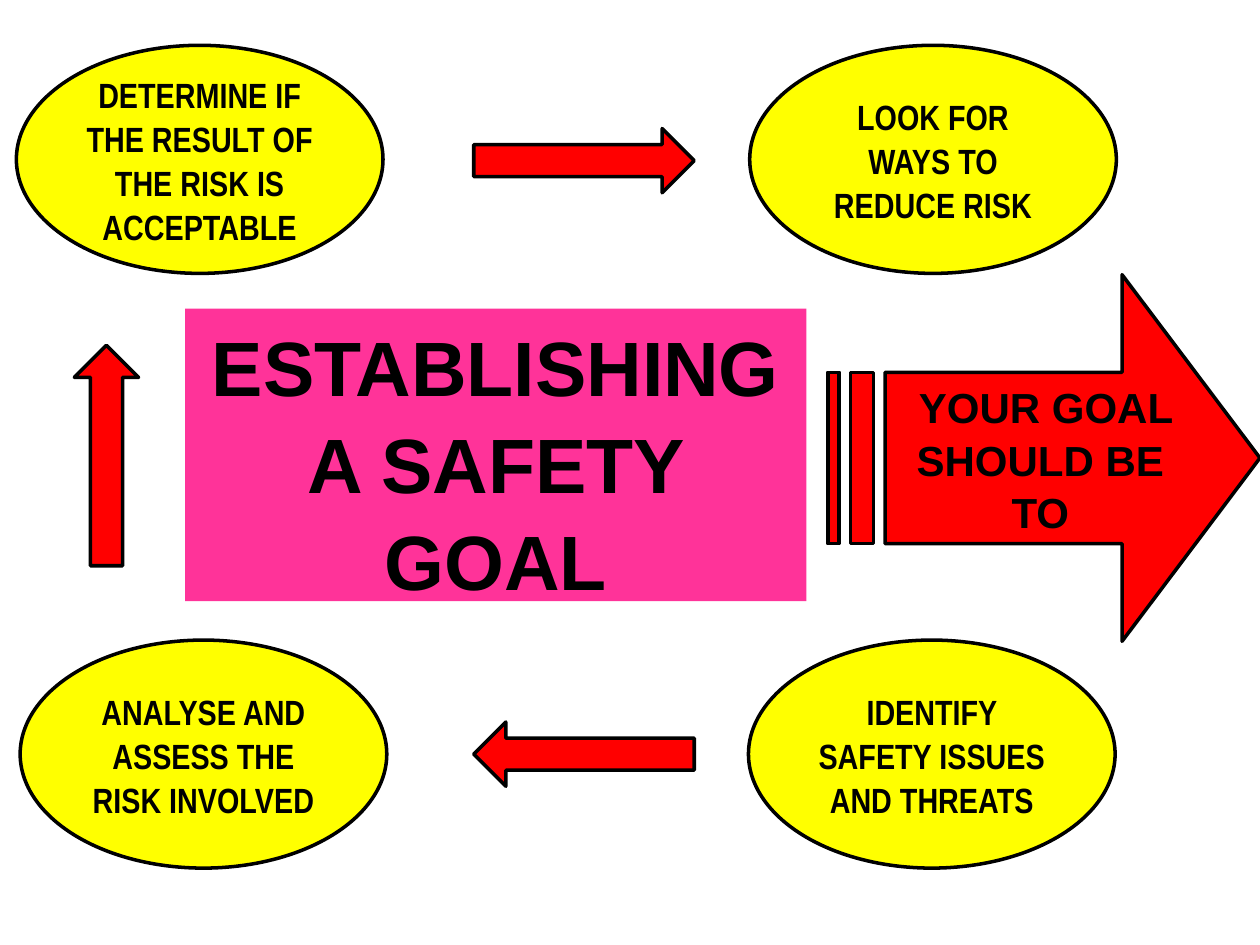
from pptx import Presentation
from pptx.dml.color import RGBColor
from pptx.enum import shapes, text
from pptx.util import Inches, Pt

PINK = RGBColor(0xFF, 0x33, 0x99)
YELLOW = RGBColor(0xFF, 0xFF, 0x00)
RED = RGBColor(0xFF, 0x00, 0x00)
BLACK = RGBColor(0x00, 0x00, 0x00)

OVAL_SIZE = (2.91, 1.81)
ARROW_SIZE = (0.51, 1.75)


def write(sp, words, size, font="Arial", anchor=text.MSO_ANCHOR.MIDDLE):
    tf = sp.text_frame
    tf.word_wrap = True
    tf.vertical_anchor = anchor
    tf.text = words
    p = tf.paragraphs[0]
    p.alignment = text.PP_ALIGN.CENTER
    p.line_spacing = 1.05
    r = p.runs[0]
    r.font.name = font
    r.font.size = Pt(size)
    r.font.bold = True
    r.font.color.rgb = BLACK


def add_outlined(s, kind, left, top, size, fill):
    sp = s.shapes.add_shape(kind, Inches(left), Inches(top), *map(Inches, size))
    sp.shadow.inherit = False
    sp.fill.solid()
    sp.fill.fore_color.rgb = fill
    sp.line.color.rgb = BLACK
    sp.line.width = Pt(2)
    return sp


def add_step(s, left, top, words):
    sp = add_outlined(s, shapes.MSO_SHAPE.OVAL, left, top, OVAL_SIZE, YELLOW)
    write(sp, words, 20, "Arial Narrow")


def add_arrow(s, left, top, rotation):
    sp = add_outlined(s, shapes.MSO_SHAPE.UP_ARROW, left, top, ARROW_SIZE, RED)
    sp.rotation = rotation


def add_title(s, words):
    sp = s.shapes.title
    sp.left, sp.top = Inches(1.47), Inches(2.45)
    sp.width, sp.height = Inches(4.93), Inches(2.32)
    sp.fill.solid()
    sp.fill.fore_color.rgb = PINK
    write(sp, words, 44, anchor=text.MSO_ANCHOR.TOP)
    sp.text_frame.auto_size = text.MSO_AUTO_SIZE.SHAPE_TO_FIT_TEXT


def add_goal_arrow(s, words):
    sp = add_outlined(s, shapes.MSO_SHAPE.STRIPED_RIGHT_ARROW,
                      6.57, 2.18, (3.43, 2.91), RED)
    sp.adjustments[0] = 0.467
    sp.adjustments[1] = 0.376
    write(sp, words, 24)


def main():
    prs = Presentation()
    prs.slide_width, prs.slide_height = Inches(10), Inches(7.5)
    s = prs.slides.add_slide(prs.slide_layouts[5])

    add_title(s, "ESTABLISHING A SAFETY GOAL")

    # Cycle of steps, clockwise from the lower right
    add_step(s, 5.94, 5.08, "IDENTIFY SAFETY ISSUES AND THREATS")
    add_step(s, 0.16, 5.08, "ANALYSE AND ASSESS THE RISK INVOLVED")
    add_step(s, 0.13, 0.36, "DETERMINE IF THE RESULT OF THE RISK IS ACCEPTABLE")
    add_step(s, 5.95, 0.36, "LOOK FOR WAYS TO REDUCE RISK")

    # Arrows between the steps: left, up, right
    add_arrow(s, 4.38, 5.11, 270)
    add_arrow(s, 0.59, 2.74, 0)
    add_arrow(s, 4.38, 0.4, 90)

    add_goal_arrow(s, " YOUR GOAL SHOULD BE TO")
    prs.save("out.pptx")


if __name__ == "__main__":
    main()
